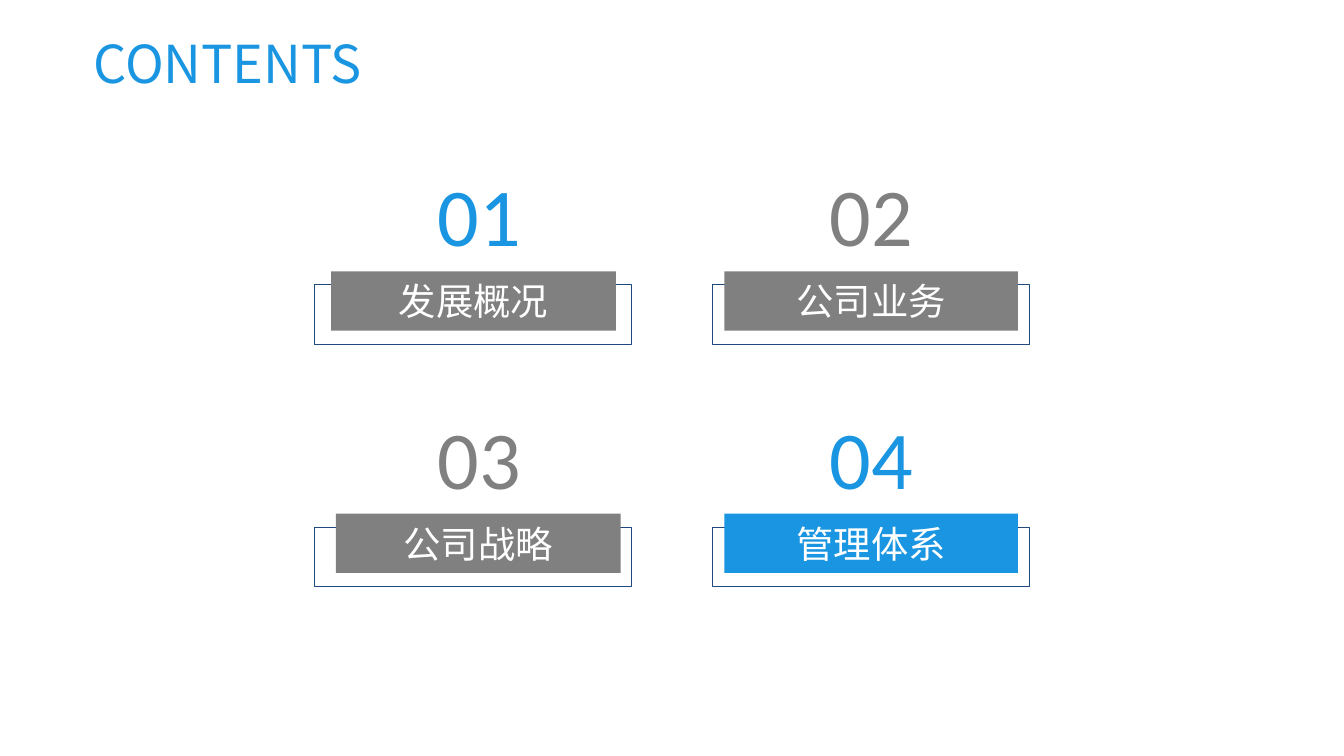
from lxml.etree import SubElement
from pptx import Presentation
from pptx.dml.color import RGBColor
from pptx.enum.shapes import MSO_SHAPE
from pptx.enum.text import MSO_ANCHOR, PP_ALIGN
from pptx.oxml.ns import qn
from pptx.util import Cm, Pt

COLOURS = {"blue": "1995E1", "grey": "808080", "navy": "1F497D", "white": "FFFFFF"}
HAN_FONT = "Noto Sans CJK SC"
DIGIT_FONT = "Calibri"

COLUMNS = (5.94, 13.46)
ROWS = (5.38, 9.96)
FRAME_WIDTH, BAR_HEIGHT = 6, 1.12
BAR_RISE = 0.25
NUMBER_WIDTH, NUMBER_HEIGHT, NUMBER_RISE = 2.1, 2.13, 2.4
NUMBER_CENTRES = (3.12, 3.01)

# number, label, column, row, number colour, bar colour, bar indent, bar width
ENTRIES = (
    ("01", "发展概况", 0, 0, "blue", "grey", 0.32, 5.38),
    ("03", "公司战略", 0, 1, "grey", "grey", 0.41, 5.38),
    ("02", "公司业务", 1, 0, "grey", "grey", 0.23, 5.55),
    ("04", "管理体系", 1, 1, "blue", "blue", 0.23, 5.55),
)


def colour(name):
    return RGBColor.from_string(COLOURS[name])


def write(box, text, *, size, ink, font=HAN_FONT, align=PP_ALIGN.CENTER, wrap=True):
    """Put one line of text in the box, centred vertically without vertical insets."""
    frame = box.text_frame
    frame.word_wrap = wrap
    frame.vertical_anchor = MSO_ANCHOR.MIDDLE
    frame.margin_top = frame.margin_bottom = 0
    para = frame.paragraphs[0]
    para.alignment = align
    span = para.add_run()
    span.text = text
    span.font.size = Pt(size)
    span.font.name = font
    span.font.color.rgb = colour(ink)
    # Han characters take their typeface from a:ea
    SubElement(span.font._element, qn("a:ea"), typeface=font)


class ContentsPage:
    def __init__(self, deck):
        self.page = deck.slides.add_slide(deck.slide_layouts[6])

    def text(self, parent, left, top, width, height, text, **style):
        box = parent.add_textbox(Cm(left), Cm(top), Cm(width), Cm(height))
        write(box, text, **style)

    def rectangle(self, parent, left, top, width, height, fill=None, line=None):
        box = parent.add_shape(
            MSO_SHAPE.RECTANGLE, Cm(left), Cm(top), Cm(width), Cm(height)
        )
        box.shadow.inherit = False
        if fill:
            box.fill.solid()
            box.fill.fore_color.rgb = colour(fill)
        else:
            box.fill.background()
        if line:
            box.line.color.rgb = colour(line)
            box.line.width = Pt(0.25)
        else:
            box.line.fill.background()
        return box

    def title(self, text):
        self.text(self.page.shapes, 1.52, 0.46, 10.41, 1.45, text,
                  size=28, ink="blue", align=PP_ALIGN.LEFT)

    def entry(self, number, label, column, row, number_ink, bar_fill, indent, width):
        """Group an outlined frame, the bar laid over it and the number above."""
        group = self.page.shapes.add_group_shape().shapes
        left, top = COLUMNS[column], ROWS[row]
        self.rectangle(group, left, top, FRAME_WIDTH, BAR_HEIGHT, line="navy")
        bar = self.rectangle(group, left + indent, top - BAR_RISE, width, BAR_HEIGHT,
                             fill=bar_fill)
        write(bar, label, size=20, ink="white")
        number_left = left + NUMBER_CENTRES[column] - NUMBER_WIDTH / 2
        self.text(group, number_left, top - NUMBER_RISE, NUMBER_WIDTH, NUMBER_HEIGHT,
                  number, size=44, ink=number_ink, font=DIGIT_FONT, wrap=False)


def main():
    deck = Presentation()
    deck.slide_width, deck.slide_height = Cm(25.4), Cm(14.29)
    contents = ContentsPage(deck)
    contents.title("CONTENTS")
    for entry in ENTRIES:
        contents.entry(*entry)
    deck.save("out.pptx")


if __name__ == "__main__":
    main()
